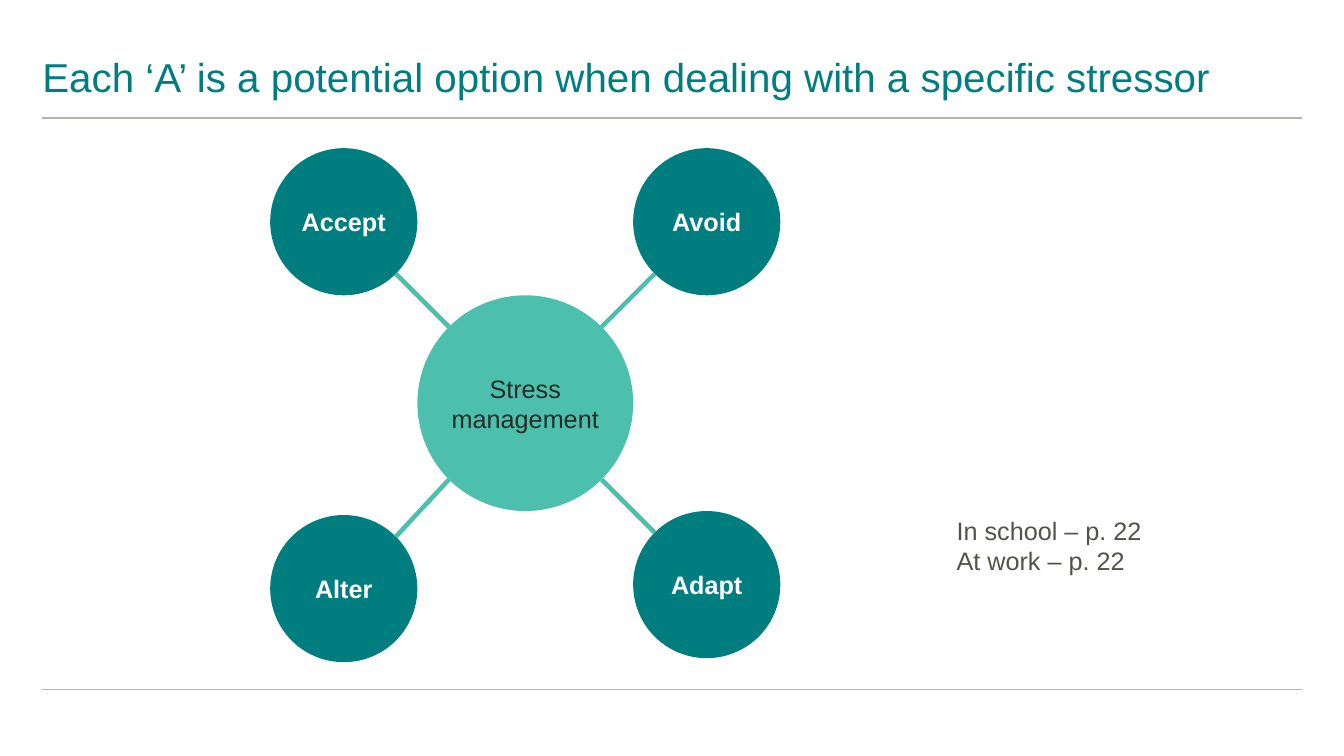
from math import sqrt
from pptx import Presentation, util as u
from pptx.dml.color import RGBColor
from pptx.enum import shapes, text
from pptx.oxml.ns import qn
from lxml import etree

TITLE = "Each ‘A’ is a potential option when dealing with a specific stressor"
HUB = ["Stress", "management"]
OPTIONS = [("Accept", -1, -1, 0), ("Avoid", 1, -1, 0), ("Alter", -1, 1, 0.04), ("Adapt", 1, 1, 0)]
PAGES = ["In school – p. 22", "At work – p. 22"]

TEAL = RGBColor(0x00, 0x7E, 0x7F)
MINT = RGBColor(0x4C, 0xC0, 0xAD)
DARK = RGBColor(0x28, 0x2A, 0x25)
GREY = RGBColor(0x51, 0x53, 0x49)
RULE = RGBColor(0xB5, 0xB5, 0xAB)
WHITE = RGBColor(0xFF, 0xFF, 0xFF)

WIDTH, HEIGHT = 13.33, 7.5
MARGIN = 0.42
RULES_Y = [1.17, 6.84]
HUB_X, HUB_Y, HUB_RADIUS = 5.21, 4.0, 1.07
OPTION_RADIUS, OPTION_OFFSET = 0.73, 1.8


def box(*lengths):
    return [u.Inches(length) for length in lengths]


def write(shape, lines, color, size=18, bold=False, align=text.PP_ALIGN.LEFT,
          anchor=text.MSO_ANCHOR.TOP, inset=0, spacing=1):
    frame = shape.text_frame
    frame.text = "\n".join(lines)
    settings = {"word_wrap": True, "vertical_anchor": anchor}
    settings.update({f"margin_{side}": u.Inches(inset) for side in ("left", "right")})
    settings.update({f"margin_{side}": u.Inches(inset / 2) for side in ("top", "bottom")})
    for name, value in settings.items():
        setattr(frame, name, value)
    for paragraph in frame.paragraphs:
        paragraph.alignment = align
        paragraph.line_spacing = spacing
        for name, value in {"name": "Arial", "size": u.Pt(size), "bold": bold}.items():
            setattr(paragraph.font, name, value)
        paragraph.font.color.rgb = color


def add_line(slide, start, end, color, width):
    line = slide.shapes.add_connector(shapes.MSO_CONNECTOR.STRAIGHT, *box(*start, *end))
    line.line.color.rgb = color
    line.line.width = u.Pt(width)
    etree.SubElement(line._element.spPr, qn("a:effectLst"))


def add_circle(slide, x, y, radius, fill, lines, color, bold):
    circle = slide.shapes.add_shape(
        shapes.MSO_SHAPE.OVAL, *box(x - radius, y - radius, 2 * radius, 2 * radius))
    circle.shadow.inherit = False
    circle.fill.solid()
    circle.fill.fore_color.rgb = fill
    circle.line.fill.background()
    write(circle, lines, color, bold=bold, align=text.PP_ALIGN.CENTER,
          anchor=text.MSO_ANCHOR.MIDDLE)


def main():
    presentation = Presentation()
    presentation.slide_width, presentation.slide_height = box(WIDTH, HEIGHT)
    slide = presentation.slides.add_slide(presentation.slide_layouts[5])

    for y in RULES_Y:
        add_line(slide, (MARGIN, y), (WIDTH - MARGIN, y), RULE, 1)

    title = slide.shapes.title
    title.left, title.top, title.width, title.height = box(MARGIN, 0.34, WIDTH - 2 * MARGIN, 0.66)
    write(title, [TITLE], TEAL, size=28.8, anchor=text.MSO_ANCHOR.BOTTOM, spacing=0.9)

    add_circle(slide, HUB_X, HUB_Y, HUB_RADIUS, MINT, HUB, DARK, False)
    for label, across, down, drop in OPTIONS:
        x = HUB_X + across * OPTION_OFFSET
        y = HUB_Y + down * OPTION_OFFSET + drop
        add_circle(slide, x, y, OPTION_RADIUS, TEAL, [label], WHITE, True)
        hub_reach, option_reach = HUB_RADIUS / sqrt(2), OPTION_RADIUS / sqrt(2)
        add_line(slide, (HUB_X + across * hub_reach, HUB_Y + down * hub_reach),
                 (x - across * option_reach, y - down * option_reach), MINT, 3.25)

    pages = slide.shapes.add_textbox(*box(9.39, 5.06, 2.77, 0.71))
    write(pages, PAGES, GREY, inset=0.1)

    presentation.save("out.pptx")


if __name__ == "__main__":
    main()
